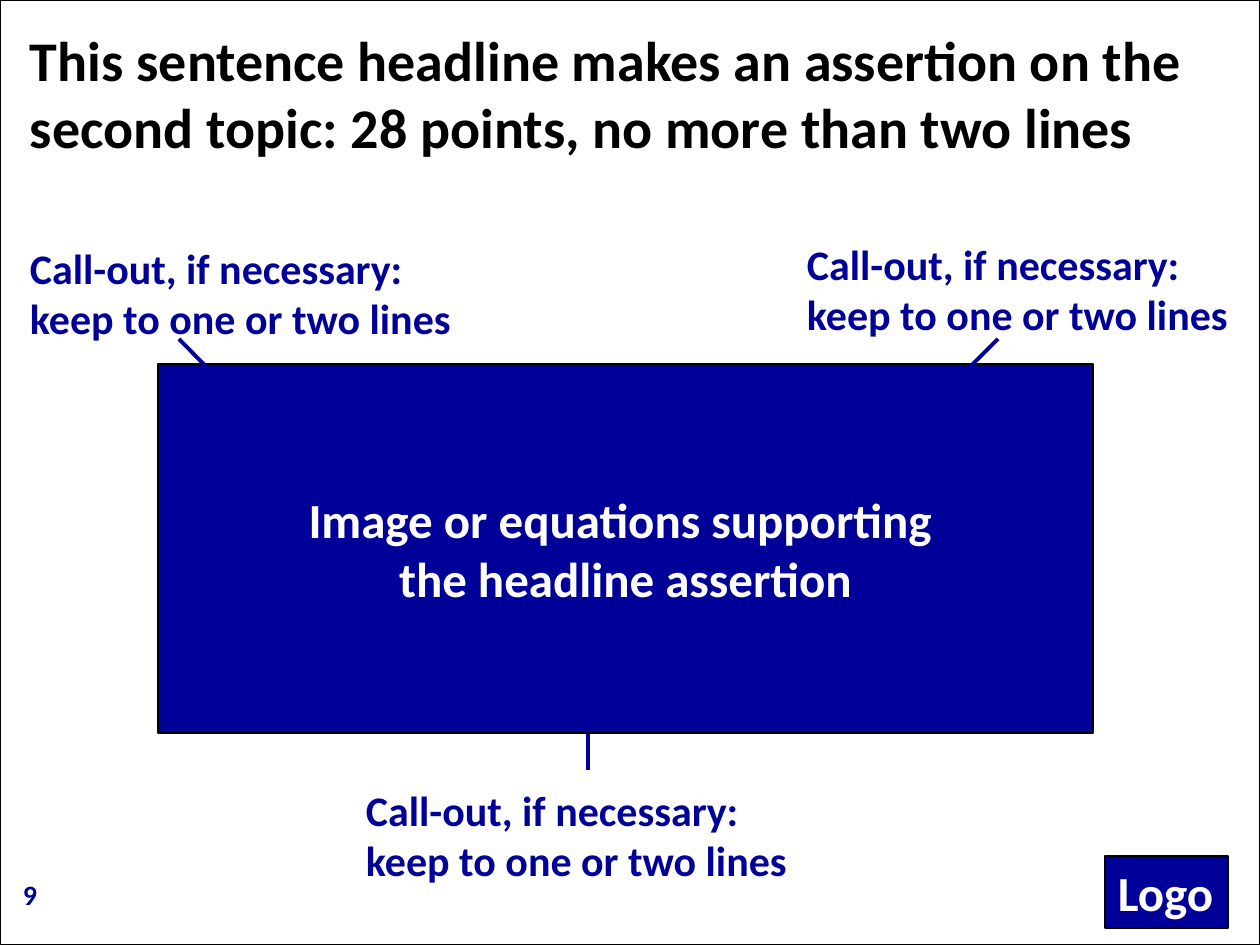
"""Build an assertion slide with a central panel and three call-outs."""
import pptx
import pptx.dml.color
import pptx.enum.shapes
import pptx.enum.text
import pptx.oxml.ns
import pptx.util
import lxml.etree

SCALE = 914400 / 126
NAVY, BLACK, WHITE = "000099", "000000", "FFFFFF"
ALIGN = pptx.enum.text.PP_ALIGN
ANCHOR = pptx.enum.text.MSO_ANCHOR


def px(length):
    return pptx.util.Emu(round(length * SCALE))


def color(code):
    return pptx.dml.color.RGBColor.from_string(code)


def write(frame, text, size, ink=NAVY, bold=True, align=ALIGN.LEFT,
          anchor=ANCHOR.TOP, wrap=True, insets=(13, 6)):
    frame.word_wrap = wrap
    frame.vertical_anchor = anchor
    frame.margin_left = frame.margin_right = px(insets[0])
    frame.margin_top = frame.margin_bottom = px(insets[1])
    paragraph = frame.paragraphs[0]
    paragraph.text = text
    paragraph.alignment = align
    for run in paragraph.runs:
        run.font.name = "Calibri"
        run.font.size = pptx.util.Pt(size)
        run.font.bold = bold
        run.font.color.rgb = color(ink)


class SlideBuilder:
    def __init__(self, deck):
        self.slide = deck.slides.add_slide(deck.slide_layouts[6])
        self.slide.background.fill.solid()
        self.slide.background.fill.fore_color.rgb = color(WHITE)

    def text(self, box, words, size, **style):
        label = self.slide.shapes.add_textbox(*map(px, box))
        write(label.text_frame, words, size, **style)

    def panel(self, box, fill=None, line_width=0.75):
        panel = self.slide.shapes.add_shape(
            pptx.enum.shapes.MSO_SHAPE.RECTANGLE, *map(px, box))
        panel.shadow.inherit = False
        if fill:
            panel.fill.solid()
            panel.fill.fore_color.rgb = color(fill)
        else:
            panel.fill.background()
        panel.line.color.rgb = color(BLACK)
        panel.line.width = pptx.util.Pt(line_width)
        return panel

    def leader(self, *ends):
        leader = self.slide.shapes.add_connector(
            pptx.enum.shapes.MSO_CONNECTOR.STRAIGHT, *map(px, ends))
        leader.line.color.rgb = color(NAVY)
        leader.line.width = pptx.util.Pt(2.25)
        properties = leader.element.spPr
        lxml.etree.SubElement(properties, pptx.oxml.ns.qn("a:effectLst"))

    def callout(self, left, top):
        self.text((left, top, 451, 108),
                  "Call-out, if necessary: keep to one or two lines",
                  24, insets=(9, 4))


def main():
    deck = pptx.Presentation()
    deck.slide_width, deck.slide_height = px(1260), px(945)
    page = SlideBuilder(deck)

    page.panel((0, 0, 1260, 945), line_width=0.5)
    page.text((10, 872, 262, 63), "9", 16)
    page.leader(588, 685, 588, 770)
    page.text((21, 21, 1227, 142),
              "This sentence headline makes an assertion on the second topic: "
              "28 points, no more than two lines",
              32, ink=BLACK, insets=(9, 4))

    evidence = page.panel((158, 364, 935, 369), NAVY)
    write(evidence.text_frame,
          "Image or equations supporting \nthe headline assertion",
          28, ink=WHITE, align=ALIGN.CENTER, anchor=ANCHOR.MIDDLE)
    logo = page.panel((1105, 856, 123, 72), NAVY)
    write(logo.text_frame, "Logo", 28, ink=WHITE, wrap=False)

    page.leader(179, 339, 231, 392)
    page.leader(998, 339, 945, 392)
    for left, top in ((21, 238), (798, 234), (357, 780)):
        page.callout(left, top)

    deck.save("out.pptx")


if __name__ == "__main__":
    main()
